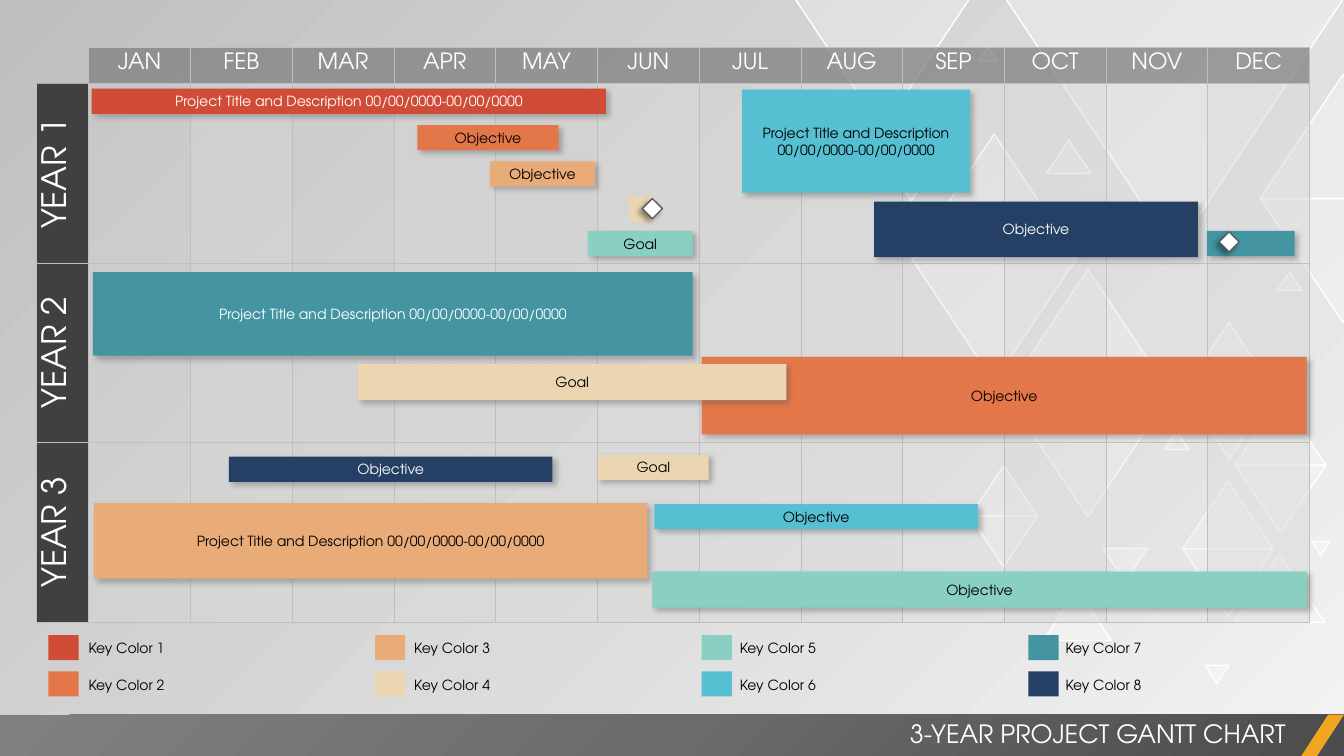
from lxml.etree import SubElement
from pptx import Presentation
from pptx.dml.color import RGBColor
from pptx.enum.shapes import MSO_SHAPE
from pptx.enum.text import MSO_ANCHOR, MSO_AUTO_SIZE, PP_ALIGN
from pptx.oxml.ns import qn
from pptx.util import Inches, Pt

FONT = "TeX Gyre Adventor"
COLORS = {
    "red": "D14C36", "orange": "E4774A", "peach": "E9AB77", "sand": "ECD6B2",
    "mint": "89D0C2", "sky": "56BFD2", "teal": "4494A2", "navy": "264065",
    "white": "FFFFFF", "black": "000000", "gold": "F0A622", "outline": "595959",
    "header": "808080", "year": "404040", "month": "D9D9D9", "grid": "BFBFBF",
    "year_top": "A6A6A6", "back_light": "F2F2F2", "back_dark": "BFBFBF",
    "footer_dark": "4C4C4C", "footer_mid": "6B6B6B", "footer_light": "808080",
}
KEY_COLORS = ["red", "orange", "peach", "sand", "mint", "sky", "teal", "navy"]
MONTHS = "JAN FEB MAR APR MAY JUN JUL AUG SEP OCT NOV DEC".split()
YEARS = ["YEAR 1", "YEAR 2", "YEAR 3"]
PROJECT = "Project Title and Description 00/00/0000-00/00/0000"

# Triangle outlines: left, top, width; a diamond is an upward and a downward triangle
DIAMONDS = [(9.04, 1.33, 1.64), (9.97, 2.67, 1.64), (11.73, 4.77, 0.9), (11.74, 3.2, 0.9),
            (12.25, 3.94, 0.9), (9.62, 4.62, 0.67), (12.5, 0.74, 1.64)]
UPWARD = [(12.24, 5.5, 0.9), (10.35, 5.85, 0.67), (11.55, 4.28, 0.24),
          (12.67, 2.7, 0.24), (9.71, 0.47, 0.18), (10.38, 1.39, 0.44)]
DOWNWARD = [(9.97, -0.02, 3.36), (10.94, 5.44, 0.44), (11.95, 6.6, 0.24),
            (8.92, 1.81, 0.24), (13.01, 5.37, 0.18), (7.88, -0.02, 1.74)]

# Bars: left, top, width, height, fill, text, text colour
BARS = [
    (0.91, 0.88, 5.1, 0.25, "red", PROJECT, "white"),
    (4.14, 1.24, 1.4, 0.25, "orange", "Objective", "black"),
    (4.86, 1.6, 1.04, 0.25, "peach", "Objective", "black"),
    (6.24, 1.95, 0.24, 0.25, "sand", "", "black"),
    (5.83, 2.29, 1.04, 0.25, "mint", "Goal", "black"),
    (7.36, 0.89, 2.26, 1.02, "sky", PROJECT, "black"),
    (0.92, 2.7, 5.95, 0.83, "teal", PROJECT, "white"),
    (8.67, 2, 3.21, 0.55, "navy", "Objective", "white"),
    (6.96, 3.54, 6, 0.77, "orange", "Objective", "black"),
    (0.93, 4.99, 5.49, 0.75, "peach", PROJECT, "black"),
    (5.93, 4.51, 1.1, 0.25, "sand", "Goal", "black"),
    (6.47, 5.67, 6.49, 0.36, "mint", "Objective", "black"),
    (6.49, 5, 3.21, 0.25, "sky", "Objective", "black"),
    (11.97, 2.29, 0.87, 0.25, "teal", "", "black"),
    (3.55, 3.61, 4.25, 0.36, "sand", "Goal", "black"),
    (2.27, 4.53, 3.21, 0.25, "navy", "Objective", "white"),
]
MILESTONES = [(6.37, 1.97), (12.09, 2.3)]


def rgb(color):
    return RGBColor.from_string(COLORS[color])


def add_color(parent, color, alpha=100):
    element = SubElement(parent, qn("a:srgbClr"), val=COLORS[color])
    if alpha < 100:
        SubElement(element, qn("a:alpha"), val=str(alpha * 1000))


def set_alpha(fill_element, alpha):
    color_element = fill_element.find(".//" + qn("a:srgbClr"))
    SubElement(color_element, qn("a:alpha"), val=str(alpha * 1000))


def write_text(text_frame, text, size, color, align):
    paragraph = text_frame.paragraphs[0]
    paragraph.alignment = align
    run = paragraph.add_run()
    run.text = text
    run.font.color.rgb = rgb(color)
    for name, value in {"name": FONT, "size": Pt(size)}.items():
        setattr(run.font, name, value)


def add_shape(shapes, kind, left, top, width, height, fill, line=None):
    shape = shapes.add_shape(kind, Inches(left), Inches(top), Inches(width), Inches(height))
    shape.shadow.inherit = False
    shape.fill.solid()
    shape.fill.fore_color.rgb = rgb(fill)
    if line:
        shape.line.color.rgb = rgb(line)
        shape.line.width = Pt(1)
    else:
        shape.line.fill.background()
    return shape


def add_shadow(shape, color, degrees):
    effects = shape._element.spPr.find(qn("a:effectLst"))
    shadow = SubElement(effects, qn("a:outerShdw"), blurRad=str(Pt(4)), dist=str(Pt(3)),
                        dir=str(degrees * 60000), algn="tl", rotWithShape="0")
    add_color(shadow, color, 40)


def add_label(slide, left, top, width, height, text, size, color, align):
    box = slide.shapes.add_textbox(Inches(left), Inches(top), Inches(width), Inches(height))
    for name, value in {"word_wrap": True, "auto_size": MSO_AUTO_SIZE.SHAPE_TO_FIT_TEXT}.items():
        setattr(box.text_frame, name, value)
    write_text(box.text_frame, text, size, color, align)


def add_background(slide):
    fill = slide.background.fill
    fill.gradient()
    fill.gradient_angle = 135
    for stop, color in zip(fill.gradient_stops, ["back_light", "back_dark"]):
        stop.color.rgb = rgb(color)


def add_triangles(slide):
    group = slide.shapes.add_group_shape()
    lower_halves = [(left, top + 0.75 * width, width) for left, top, width in DIAMONDS]
    for rotation, places in ((0, DIAMONDS + UPWARD), (180, lower_halves + DOWNWARD)):
        for left, top, width in places:
            triangle = add_shape(group.shapes, MSO_SHAPE.ISOSCELES_TRIANGLE,
                                 left, top, width, 0.75 * width, "white", "white")
            triangle.rotation = rotation
            set_alpha(triangle._element.spPr.find(qn("a:solidFill")), 30)


def add_footer(slide):
    footer = add_shape(slide.shapes, MSO_SHAPE.RECTANGLE, 0, 7.09, 13.33, 0.42, "footer_mid")
    footer.fill.gradient()
    gradient = footer._element.spPr.find(qn("a:gradFill"))
    for child in list(gradient):
        gradient.remove(child)
    stops = SubElement(gradient, qn("a:gsLst"))
    for position, color in ((0, "footer_dark"), (50, "footer_mid"), (100, "footer_light")):
        add_color(SubElement(stops, qn("a:gs"), pos=str(position * 1000)), color)
    radial = SubElement(gradient, qn("a:path"))
    radial.set("path", "circle")
    SubElement(radial, qn("a:fillToRect"), l="100000", t="100000")
    accent = add_shape(slide.shapes, MSO_SHAPE.PARALLELOGRAM, 12.9, 7.09, 0.43, 0.42, "gold")
    accent.adjustments[0] = 0.65
    add_label(slide, 5.25, 7.08, 7.6, 0.4, "3-YEAR PROJECT GANTT CHART", 18, "white", PP_ALIGN.RIGHT)


def format_cell(cell, borders, fill=None, alpha=100):
    properties = cell._tc.get_or_add_tcPr()
    for side in "LRTB":
        color = borders.get(side)
        line = SubElement(properties, qn("a:ln" + side), w=str(Pt(0.5)))
        if color:
            add_color(SubElement(line, qn("a:solidFill")), color)
        else:
            SubElement(line, qn("a:noFill"))
    if not fill:
        cell.fill.background()
        return
    cell.fill.solid()
    cell.fill.fore_color.rgb = rgb(fill)
    if alpha < 100:
        set_alpha(properties.find(qn("a:solidFill")), alpha)


def add_calendar(slide):
    frame = slide.shapes.add_table(len(YEARS) + 1, len(MONTHS) + 1, Inches(0.36), Inches(0.47),
                                   Inches(12.63), Inches(5.7))
    table = frame.table
    table.first_row = table.horz_banding = False
    for index, column in enumerate(table.columns):
        column.width = Inches((12.63 - 0.52) / 12 if index else 0.52)
    for index, row in enumerate(table.rows):
        row.height = Inches(1.78 if index else 0.36)
    grid = dict.fromkeys("LRTB", "grid")
    for row in range(len(YEARS) + 1):
        for column in range(len(MONTHS) + 1):
            cell = table.cell(row, column)
            cell.vertical_anchor = MSO_ANCHOR.MIDDLE
            if row == 0:
                cell.margin_top, cell.margin_bottom = Inches(0.01), Inches(0.05)
            if row and column:
                format_cell(cell, grid, "month", 25 if column % 2 else 50)
            elif row:
                format_cell(cell, {**grid, "T": "year_top" if row == 1 else "grid"}, "year")
                cell._tc.get_or_add_tcPr().set("vert", "vert270")
                write_text(cell.text_frame, YEARS[row - 1], 24, "white", PP_ALIGN.CENTER)
            elif column:
                format_cell(cell, grid, "header", 75)
                write_text(cell.text_frame, MONTHS[column - 1], 16, "white", PP_ALIGN.CENTER)
            else:
                format_cell(cell, {"R": "grid", "B": "year_top"})
                SubElement(cell.text_frame.paragraphs[0]._p, qn("a:endParaRPr"), sz="1000")


def add_bars(slide):
    for left, top, width, height, fill, text, color in BARS:
        bar = add_shape(slide.shapes, MSO_SHAPE.RECTANGLE, left, top, width, height, fill)
        if text:
            bar.text_frame.vertical_anchor = MSO_ANCHOR.MIDDLE
            write_text(bar.text_frame, text, 10, color, PP_ALIGN.CENTER)
        if width > 0.24:
            add_shadow(bar, "outline", 45)
    for left, top in MILESTONES:
        milestone = add_shape(slide.shapes, MSO_SHAPE.DIAMOND, left, top, 0.2, 0.2, "white", "outline")
        add_shadow(milestone, "black", 135)


def add_key(slide):
    for index, color in enumerate(KEY_COLORS):
        column, row = divmod(index, 2)
        top = 6.3 + 0.36 * row
        add_shape(slide.shapes, MSO_SHAPE.RECTANGLE, 0.48 + 3.24 * column, top, 0.3, 0.25, color)
        add_label(slide, 0.78 + 3.23 * column, top, 2.4, 0.27, f"Key Color {index + 1}",
                  10, "black", PP_ALIGN.LEFT)


def main():
    presentation = Presentation()
    presentation.slide_width, presentation.slide_height = Inches(13.33), Inches(7.5)
    slide = presentation.slides.add_slide(presentation.slide_layouts[6])
    for add_part in (add_background, add_triangles, add_footer, add_calendar, add_bars, add_key):
        add_part(slide)
    presentation.save("out.pptx")


if __name__ == "__main__":
    main()
